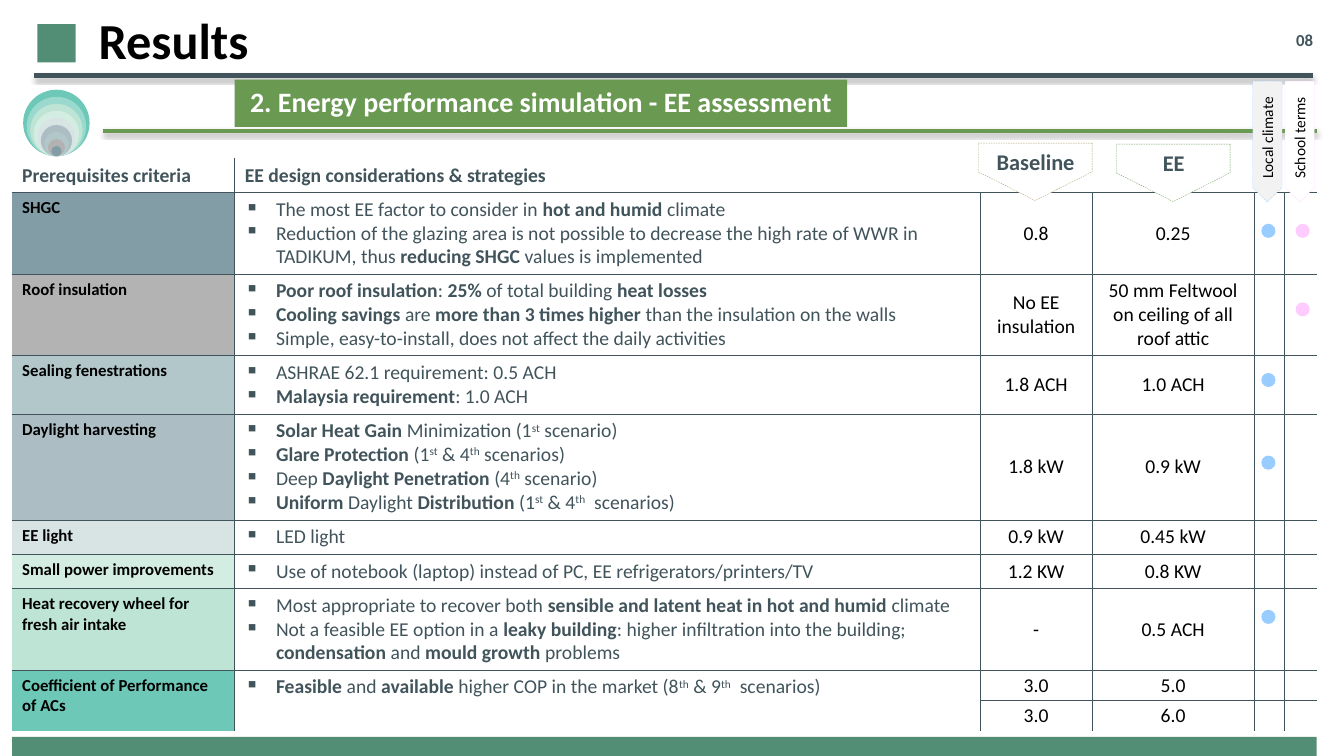
"""Build the slide on energy performance simulation results."""
import pptx
import pptx.util
import pptx.dml.color
import pptx.enum.dml
import pptx.enum.shapes
import pptx.enum.text
import pptx.oxml
import pptx.oxml.ns

Inches, Pt = pptx.util.Inches, pptx.util.Pt
RGB = pptx.dml.color.RGBColor
SHAPE = pptx.enum.shapes.MSO_SHAPE
ALIGN = pptx.enum.text.PP_ALIGN
ANCHOR = pptx.enum.text.MSO_ANCHOR

BLACK, WHITE = RGB(0, 0, 0), RGB(0xFF, 0xFF, 0xFF)
SLATE, PINE, LEAF = RGB(0x41, 0x54, 0x5B), RGB(0x52, 0x8E, 0x75), RGB(0x6A, 0x99, 0x51)
SKY, PINK = RGB(0x99, 0xCC, 0xFF), RGB(0xFF, 0xCC, 0xFF)
SAND, PALE = RGB(0xA8, 0x98, 0x65), RGB(0xF2, 0xF2, 0xF2)

HEADERS = ["Prerequisites criteria", "EE design considerations & strategies"]
CRITERIA = [
    ("SHGC", "839DA7", [
        "The most EE factor to consider in *hot and humid *climate",
        "Reduction of the glazing area is not possible to decrease the high rate of WWR in "
        "TADIKUM, thus *reducing SHGC *values is implemented"], "0.8", "0.25"),
    ("Roof insulation", "B3B3B3", [
        "*Poor roof insulation*: *25% *of total building *heat losses*",
        "*Cooling savings *are *more than 3 times higher *than the insulation on the walls",
        "Simple, easy-to-install, does not affect the daily activities"],
        "No EE insulation", "50 mm Feltwool on ceiling of all roof attic"),
    ("Sealing fenestrations", "B1C7CA", [
        "ASHRAE 62.1 requirement: 0.5 ACH",
        "*Malaysia requirement*: 1.0 ACH"], "1.8 ACH", "1.0 ACH"),
    ("Daylight harvesting", "ACBEC4", [
        "*Solar Heat Gain *Minimization (1^st^ scenario)",
        "*Glare Protection *(1^st^ & 4^th^ scenarios)",
        "Deep *Daylight Penetration *(4^th^ scenario)",
        "*Uniform* Daylight *Distribution* (1^st^ & 4^th^  scenarios)"], "1.8 kW", "0.9 kW"),
    ("EE light", "D8E3E4", ["LED light"], "0.9 kW", "0.45 kW"),
    ("Small power improvements", "D4EDE3", [
        "Use of notebook (laptop) instead of PC, EE refrigerators/printers/TV"],
        "1.2 KW", "0.8 KW"),
    ("Heat recovery wheel for fresh air intake", "BEE4D6", [
        "Most appropriate to recover both *sensible and latent heat in hot and humid *climate",
        "Not a feasible EE option in a *leaky building*: higher infiltration into the building; "
        "*condensation* and *mould growth *problems"], "-", "0.5 ACH"),
    ("Coefficient of Performance of ACs", "6DC8B7", [
        "*Feasible* and *available* higher COP in the market (8^th^ & 9^th^  scenarios)"],
        "3.0", "5.0"),
    (None, None, [], "3.0", "6.0"),
]
COLS = [2.21, 7.4, 1.11, 1.61, 0.3, 0.32]
ROWS = [0.34, 0.81, 0.81, 0.58, 1.05, 0.34, 0.34, 0.81, 0.3, 0.3]
DOTS = [(12.52, 2.22, SKY), (12.86, 2.22, PINK), (12.86, 3, PINK),
        (12.52, 3.7, SKY), (12.52, 4.52, SKY), (12.52, 6.05, SKY)]
SIDE_TAGS = [("Local climate", 11.98, PALE, SKY), ("School terms", 12.3, WHITE, PINK)]
COLUMN_TAGS = [("EE", 11.08, 1.43, LEAF), ("Baseline", 9.71, 1.42, SAND)]
RINGS = ["6DC8B7", "9AD9CD", "BEE4D6", "D4EDE3", "D8E3E4",
         "ACBEC4", "B1C7CA", "B2B2B2", "839DA6"]


def add_runs(p, text, size, color, bold=False):
    for i, chunk in enumerate(text.split("*")):
        for j, piece in enumerate(chunk.split("^")):
            if not piece:
                continue
            r = p.add_run()
            r.text = piece
            look = {"name": "Calibri", "size": Pt(size), "bold": bold or i % 2 == 1}
            for key, value in look.items():
                setattr(r.font, key, value)
            r.font.color.rgb = color
            if j % 2:
                r._r.get_or_add_rPr().set("baseline", "30000")


def set_text(sp, text, size, color, bold=True, align=ALIGN.CENTER, inset=(0.1, 0.05),
             anchor=ANCHOR.TOP, **spacing):
    tf = sp.text_frame
    x, y = map(Inches, inset)
    frame = {"word_wrap": True, "vertical_anchor": anchor, "margin_left": x,
             "margin_right": x, "margin_top": y, "margin_bottom": y}
    for key, value in frame.items():
        setattr(tf, key, value)
    p = tf.paragraphs[0]
    for key, value in {"alignment": align, **spacing}.items():
        setattr(p, key, value)
    add_runs(p, text, size, color, bold)


def add_box(s, kind, x, y, w, h, fill, line=None):
    sp = s.shapes.add_shape(kind, *map(Inches, (x, y, w, h)))
    sp.shadow.inherit = False
    sp.fill.solid()
    sp.fill.fore_color.rgb = fill
    if line is None:
        sp.line.fill.background()
    else:
        sp.line.color.rgb = line
        sp.line.width = Pt(0.25)
        sp.line.dash_style = pptx.enum.dml.MSO_LINE.DASH
    return sp


def add_textbox(s, x, y, w, h, *args, **kwargs):
    set_text(s.shapes.add_textbox(*map(Inches, (x, y, w, h))), *args, **kwargs)


def add_rule(s, x1, x2, y, color):
    ln = s.shapes.add_connector(pptx.enum.shapes.MSO_CONNECTOR.STRAIGHT,
                                *map(Inches, (x1, y, x2, y)))
    ln.line.color.rgb = color
    ln.line.width = Pt(3)
    ln._element.spPr.append(pptx.oxml.parse_xml(
        f'<a:effectLst {pptx.oxml.ns.nsdecls("a")}><a:outerShdw blurRad="40000" dist="20000" '
        'dir="5400000" rotWithShape="0"><a:srgbClr val="000000"><a:alpha val="38000"/>'
        '</a:srgbClr></a:outerShdw></a:effectLst>'))


def set_borders(cell, row, col):
    body, last_row = row > 0, len(ROWS) - 1
    shown = {"lnL": col == 1 or (body and col > 1),
             "lnR": col == 0 or (body and col < len(COLS) - 1),
             "lnT": body and not (row == last_row and col < 2),
             "lnB": row < last_row - (col < 2)}
    for side, visible in shown.items():
        paint = f'<a:solidFill><a:srgbClr val="{SLATE}"/></a:solidFill>' if visible else '<a:noFill/>'
        cell._tc.get_or_add_tcPr().append(pptx.oxml.parse_xml(
            f'<a:{side} {pptx.oxml.ns.nsdecls("a")} w="9525">{paint}</a:{side}>'))


def add_bullets(cell, lines):
    tf = cell.text_frame
    for i, line in enumerate(lines):
        p = tf.paragraphs[0] if i == 0 else tf.add_paragraph()
        pPr = p._p.get_or_add_pPr()
        pPr.set("marL", str(Inches(0.31)))
        pPr.set("indent", str(-Inches(0.31)))
        pPr.append(pptx.oxml.parse_xml(
            f'<a:buChar {pptx.oxml.ns.nsdecls("a")} char="▪"/>'))
        add_runs(p, line, 14, SLATE)


def add_criteria_table(s):
    frame = s.shapes.add_table(len(ROWS), len(COLS), *map(
        Inches, (0.12, 1.57, sum(COLS), sum(ROWS))))
    tbl = frame.table
    tbl.first_row = tbl.horz_banding = False
    for sizes, parts, key in ((COLS, tbl.columns, "width"), (ROWS, tbl.rows, "height")):
        for size, part in zip(sizes, parts):
            setattr(part, key, Inches(size))
    for col in (0, 1):
        tbl.cell(8, col).merge(tbl.cell(9, col))
    for row in range(len(ROWS)):
        for col in range(len(COLS)):
            cell = tbl.cell(row, col)
            set_borders(cell, row, col)
            cell.fill.background()
    for col, text in enumerate(HEADERS):
        cell = tbl.cell(0, col)
        cell.vertical_anchor = ANCHOR.MIDDLE
        add_runs(cell.text_frame.paragraphs[0], text, 14, SLATE, True)
    for row, (name, fill, lines, *values) in enumerate(CRITERIA, 1):
        if name:
            cell = tbl.cell(row, 0)
            cell.fill.solid()
            cell.fill.fore_color.rgb = RGB.from_string(fill)
            add_runs(cell.text_frame.paragraphs[0], name, 12, BLACK, True)
        add_bullets(tbl.cell(row, 1), lines)
        for col, value in enumerate(values, 2):
            cell = tbl.cell(row, col)
            cell.vertical_anchor = ANCHOR.MIDDLE
            p = cell.text_frame.paragraphs[0]
            p.alignment = ALIGN.CENTER
            add_runs(p, value, 14, BLACK)
            if row >= 8:
                p.space_after = Pt(6)
                cell.margin_left = cell.margin_right = Inches(0.07)
                cell.margin_top = cell.margin_bottom = 0
    for cell in tbl.iter_cells():
        if not cell.text_frame.text:
            cell.text_frame.paragraphs[0]._p.append(pptx.oxml.parse_xml(
                f'<a:endParaRPr {pptx.oxml.ns.nsdecls("a")} sz="1000"/>'))


def main():
    prs = pptx.Presentation()
    prs.slide_width, prs.slide_height = Inches(13.34), Inches(7.5)
    s = prs.slides.add_slide(prs.slide_layouts[6])
    add_rule(s, 0.34, 13.03, 0.75, SLATE)
    add_textbox(s, 0.88, 0.11, 2.64, 0.64, "Results", 36, BLACK, align=ALIGN.LEFT,
                line_spacing=0.9, space_before=Pt(10))
    add_box(s, SHAPE.RECTANGLE, 0.37, 0.24, 0.38, 0.38, PINE)
    banner = add_box(s, SHAPE.RECTANGLE, 2.33, 0.79, 6.08, 0.47, LEAF)
    set_text(banner, "2. Energy performance simulation - EE assessment", 20, WHITE,
             anchor=ANCHOR.MIDDLE, line_spacing=0.9)
    add_criteria_table(s)
    for x, y, color in DOTS:
        add_box(s, SHAPE.FLOWCHART_CONNECTOR, x, y, 0.14, 0.14, color)
    add_box(s, SHAPE.RECTANGLE, 0.12, 7.31, 12.95, 0.19, PINE)
    add_rule(s, 1.02, 13.07, 1.3, LEAF)
    for text, x, fill, line in SIDE_TAGS:
        tag = add_box(s, SHAPE.PENTAGON, x, 1.26, 1.2, 0.29, fill, line)
        tag.rotation = 90
        tag._element.spPr.xfrm.set("flipV", "1")
        set_text(tag, text, 11, BLACK, bold=False)
    for i, color in enumerate(RINGS):
        d = 0.66 - 0.07 * i
        add_box(s, SHAPE.OVAL, 0.56 - d / 2, 1.55 - d, d, d, RGB.from_string(color))
    for text, x, y, line in COLUMN_TAGS:
        w, h = 1.13, 0.57
        tag = add_box(s, SHAPE.PENTAGON, x + (w - h) / 2, y + (h - w) / 2, h, w, WHITE, line)
        tag.rotation = 90
    for text, x, y, line in COLUMN_TAGS:
        add_textbox(s, x, y, 1.14, 0.37, text, 16, SLATE)
    add_textbox(s, 12.61, 0.21, 0.68, 0.37, "08", 12, SLATE,
                inset=(0.13, 0.13), anchor=ANCHOR.MIDDLE)
    prs.save("out.pptx")


if __name__ == "__main__":
    main()
